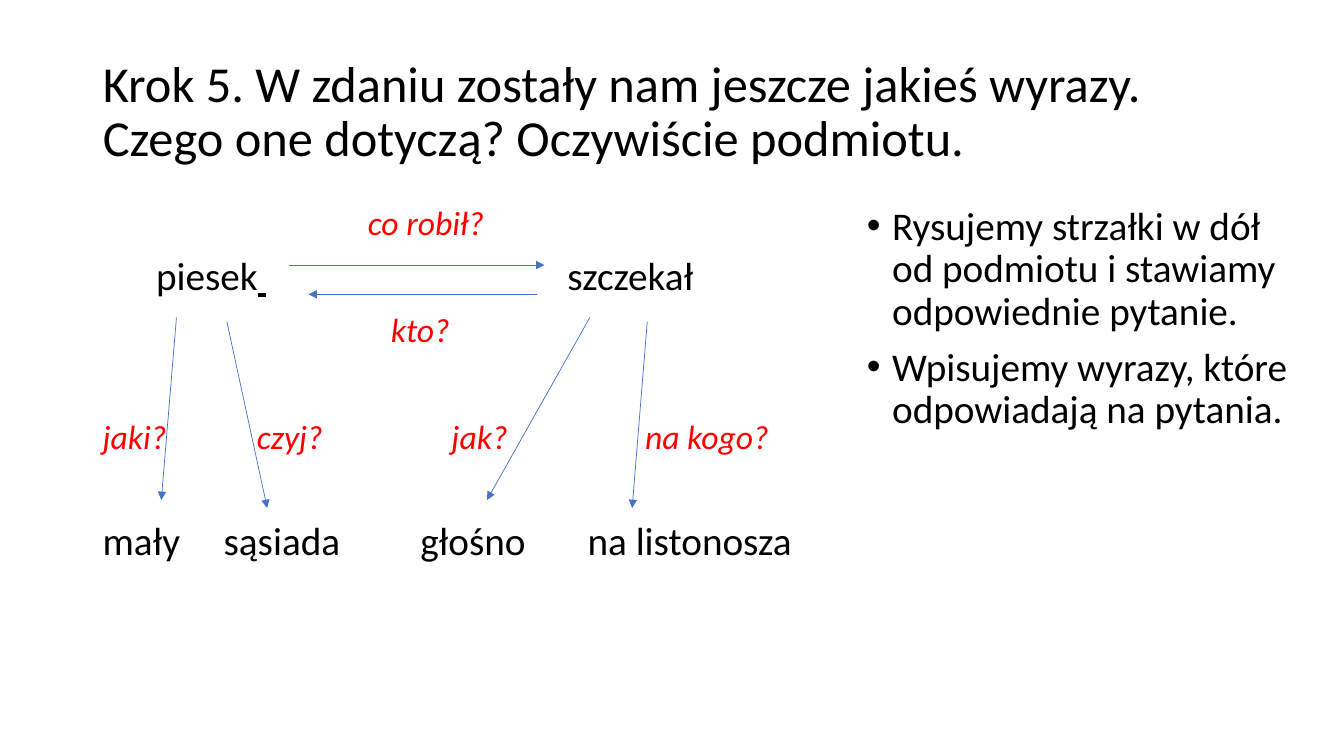
from lxml.etree import SubElement
from pptx import Presentation
from pptx.dml.color import RGBColor
from pptx.enum.shapes import MSO_CONNECTOR
from pptx.enum.text import MSO_ANCHOR, MSO_AUTO_SIZE, PP_ALIGN
from pptx.oxml.ns import qn
from pptx.util import Pt

PX = 9144  # 100 px to the inch
BLACK, RED, BLUE = "000000", "FF0000", "4472C4"


def px(length):
    return round(length * PX)


def color(hex_code):
    return RGBColor.from_string(hex_code)


def add_run(paragraph, text, size, hex_code=BLACK, italic=False, underline=False):
    run = paragraph.add_run()
    run.text = text
    font = run.font
    font.name, font.size = "Calibri", Pt(size)
    font.italic, font.underline = italic, underline
    font.color.rgb = color(hex_code)


def prepare_frame(frame, anchor=MSO_ANCHOR.TOP):
    frame.word_wrap = True
    frame.auto_size = MSO_AUTO_SIZE.NONE
    frame.vertical_anchor = anchor


def next_paragraph(frame, index, space_before=10):
    paragraph = frame.add_paragraph() if index else frame.paragraphs[0]
    paragraph.alignment = PP_ALIGN.LEFT
    paragraph.line_spacing = 0.9
    paragraph.space_before = Pt(space_before)
    return paragraph


def add_text_area(slide, box):
    frame = slide.shapes.add_textbox(*map(px, box)).text_frame
    prepare_frame(frame)
    return frame


def set_tabs(paragraph, stops):
    tab_list = SubElement(paragraph._p.get_or_add_pPr(), qn("a:tabLst"))
    for stop in stops:
        SubElement(tab_list, qn("a:tab"), pos=str(px(stop)), algn="l")


def add_arrow(slide, start, end):
    arrow = slide.shapes.add_connector(
        MSO_CONNECTOR.STRAIGHT, *map(px, (*start, *end)))
    arrow.line.color.rgb = color(BLUE)
    arrow.line.width = Pt(0.5)
    SubElement(arrow.line._get_or_add_ln(), qn("a:tailEnd"), type="triangle")
    SubElement(arrow._element.spPr, qn("a:effectLst"))


def place_title(slide, box):
    title = slide.shapes.title
    title.left, title.top, title.width, title.height = map(px, box)
    prepare_frame(title.text_frame, MSO_ANCHOR.MIDDLE)
    paragraph = next_paragraph(title.text_frame, 0, space_before=0)
    add_run(paragraph, "Krok 5. W zdaniu zostały nam jeszcze jakieś wyrazy. "
            "Czego one dotyczą? Oczywiście podmiotu.", 36)


def place_sentence_diagram(slide, box):
    left, top = box[:2]
    frame = add_text_area(slide, box)
    word, question = (28, BLACK, False), (24, RED, True)

    # Rows: style, space before, words with their tab position (0 = margin)
    rows = [
        (question, 10, [(263, "co robił?")]),
        (word, 10, [(53, "piesek"), (461, "szczekał")]),
        (question, 10, [(286, "kto?")]),
        (question, 51, [(0, "jaki?"), (153, "czyj?"), (346, "jak?"), (538, "na kogo?")]),
        (word, 46, [(0, "mały"), (120, "sąsiada"), (315, "głośno"), (481, "na listonosza")]),
    ]
    for index, (style, space_before, entries) in enumerate(rows):
        paragraph = next_paragraph(frame, index, space_before)
        set_tabs(paragraph, [stop for stop, _ in entries if stop])
        for stop, text in entries:
            add_run(paragraph, "\t" + text if stop else text, *style)
            if text == "piesek":
                add_run(paragraph, " ", *style, underline=True)

    # Arrows from words to their modifiers, then between subject and predicate
    arrows = [
        ((83, 115), (68, 296)),
        ((133, 119), (173, 304)),
        ((493, 115), (391, 296)),
        ((550, 119), (535, 304)),
        ((195, 63), (448, 63)),
        ((441, 92), (214, 92)),
    ]
    for (x1, y1), (x2, y2) in arrows:
        add_arrow(slide, (left + x1, top + y1), (left + x2, top + y2))


def place_instructions(slide, box):
    frame = add_text_area(slide, box)
    instructions = [
        "Rysujemy strzałki w dół od podmiotu i stawiamy odpowiednie pytanie.",
        "Wpisujemy wyrazy, które odpowiadają na pytania.",
    ]
    for index, instruction in enumerate(instructions):
        paragraph = next_paragraph(frame, index)
        properties = paragraph._p.get_or_add_pPr()
        properties.set("marL", str(px(25)))
        properties.set("indent", str(px(-25)))
        SubElement(properties, qn("a:buFont"), typeface="Arial")
        SubElement(properties, qn("a:buChar"), char="•")
        add_run(paragraph, instruction, 28)


def main():
    deck = Presentation()
    deck.slide_width, deck.slide_height = px(1333), px(750)
    slide = deck.slides.add_slide(deck.slide_layouts.get_by_name("Title Only"))
    place_title(slide, (92, 40, 1150, 145))
    place_sentence_diagram(slide, (92, 200, 710, 476))
    place_instructions(slide, (850, 200, 438, 476))
    deck.save("out.pptx")


if __name__ == "__main__":
    main()
